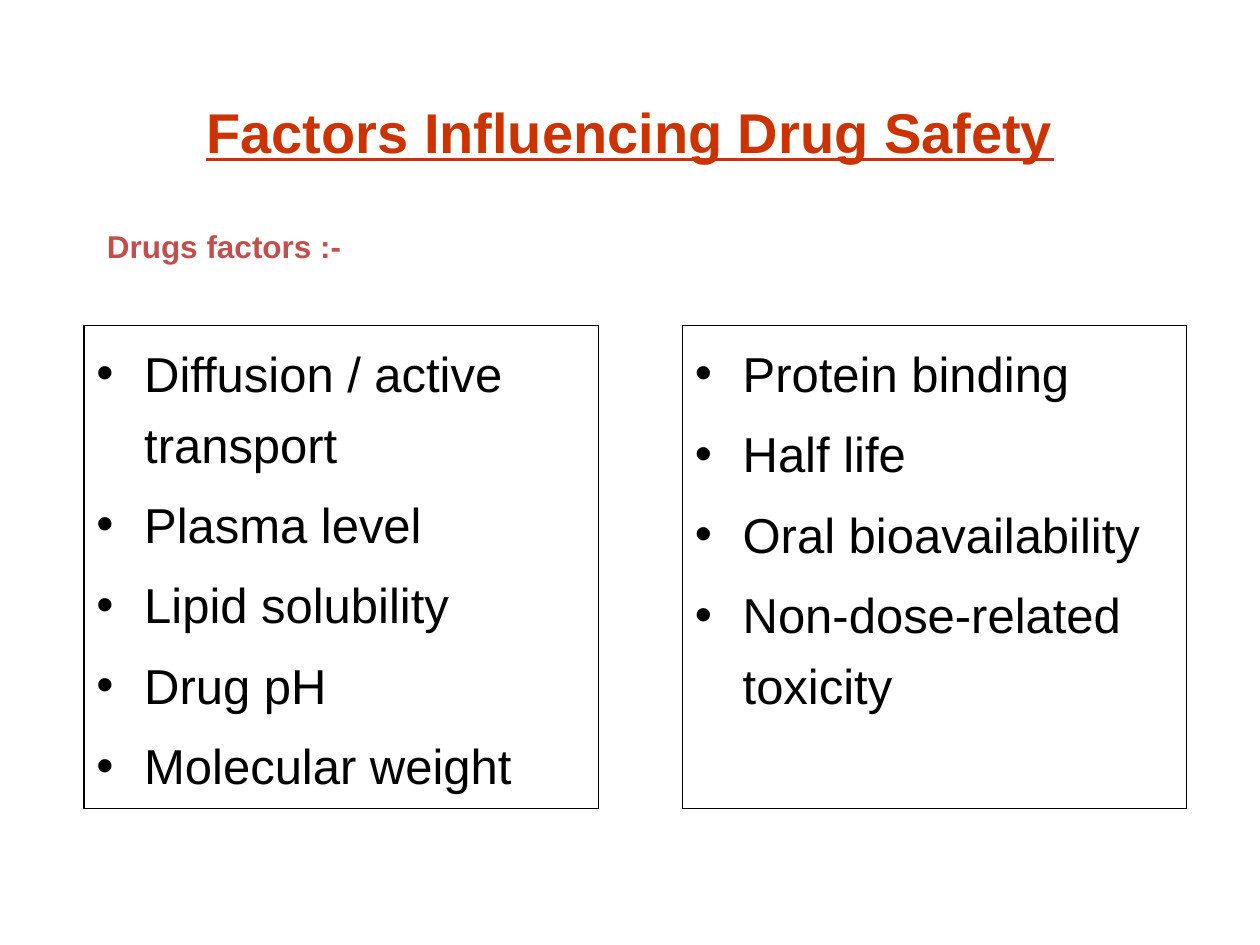
from dataclasses import dataclass

from lxml import etree
from pptx import Presentation
from pptx.dml.color import RGBColor
from pptx.enum.shapes import MSO_SHAPE
from pptx.enum.text import MSO_ANCHOR, PP_ALIGN
from pptx.oxml.ns import qn
from pptx.util import Inches, Pt

RECTANGLE = MSO_SHAPE.RECTANGLE
TOP, MIDDLE = MSO_ANCHOR.TOP, MSO_ANCHOR.MIDDLE
LEFT, CENTER = PP_ALIGN.LEFT, PP_ALIGN.CENTER

BLACK = RGBColor(0x00, 0x00, 0x00)
TITLE_RED = RGBColor(0xCC, 0x33, 0x00)
HEADING_RED = RGBColor(0xC0, 0x50, 0x4D)

FONT = "Arial"
GRID = Inches(1 / 12)  # the page is 120 columns by 90 rows
BULLET_INDENT = Inches(0.38)


@dataclass(frozen=True)
class Area:
    """Position and size in grid columns and rows."""
    column: float
    row: float
    columns: float
    rows: float

    def lengths(self) -> list[int]:
        return [round(GRID * n) for n in (self.column, self.row, self.columns, self.rows)]


@dataclass(frozen=True)
class FactorList:
    area: Area
    factors: tuple[str, ...]


TITLE_AREA = Area(9, 5, 102, 15)
HEADING_AREA = Area(9, 21, 48, 6.8)
FACTOR_LISTS = (
    FactorList(Area(8, 31, 49, 46), (
        "Diffusion / active transport", "Plasma level", "Lipid solubility",
        "Drug pH", "Molecular weight")),
    FactorList(Area(65, 31, 48, 46), (
        "Protein binding", "Half life", "Oral bioavailability",
        "Non-dose-related toxicity")),
)


def add_bullet(para) -> None:
    properties = para._p.get_or_add_pPr()
    properties.set("marL", str(BULLET_INDENT))
    properties.set("indent", str(-BULLET_INDENT))
    etree.SubElement(properties, qn("a:buFont")).set("typeface", FONT)
    etree.SubElement(properties, qn("a:buChar")).set("char", "•")


def write_text(para, text: str, *, size: float, color: RGBColor, bold: bool = False,
               underline: bool = False, align: PP_ALIGN = LEFT) -> None:
    para.alignment = align
    span = para.add_run()
    span.text = text
    span.font.name = FONT
    span.font.size = Pt(size)
    span.font.bold = bold
    span.font.underline = underline
    span.font.color.rgb = color


def add_text(page, area: Area, text: str, *, anchor: MSO_ANCHOR = TOP, **text_format) -> None:
    frame = page.shapes.add_textbox(*area.lengths()).text_frame
    frame.word_wrap = True
    frame.vertical_anchor = anchor
    write_text(frame.paragraphs[0], text, **text_format)


def add_factor_list(page, factor_list: FactorList) -> None:
    box = page.shapes.add_shape(RECTANGLE, *factor_list.area.lengths())
    box.shadow.inherit = False
    box.fill.background()
    box.line.color.rgb = BLACK
    box.line.width = Pt(0.75)
    frame = box.text_frame
    frame.word_wrap = True
    frame.vertical_anchor = TOP
    for index, factor in enumerate(factor_list.factors):
        para = frame.add_paragraph() if index else frame.paragraphs[0]
        para.line_spacing = 1.2
        para.space_before = Pt(5.6 if index else 0)
        add_bullet(para)
        write_text(para, factor, size=28, color=BLACK)


def main() -> None:
    deck = Presentation()
    deck.slide_width, deck.slide_height = Inches(10), Inches(7.5)
    page = deck.slides.add_slide(deck.slide_layouts[6])
    add_text(page, TITLE_AREA, "Factors Influencing Drug Safety", anchor=MIDDLE,
             size=32, color=TITLE_RED, bold=True, underline=True, align=CENTER)
    add_text(page, HEADING_AREA, "Drugs factors :-", size=18, color=HEADING_RED, bold=True)
    for factor_list in FACTOR_LISTS:
        add_factor_list(page, factor_list)
    deck.save("out.pptx")


if __name__ == "__main__":
    main()
